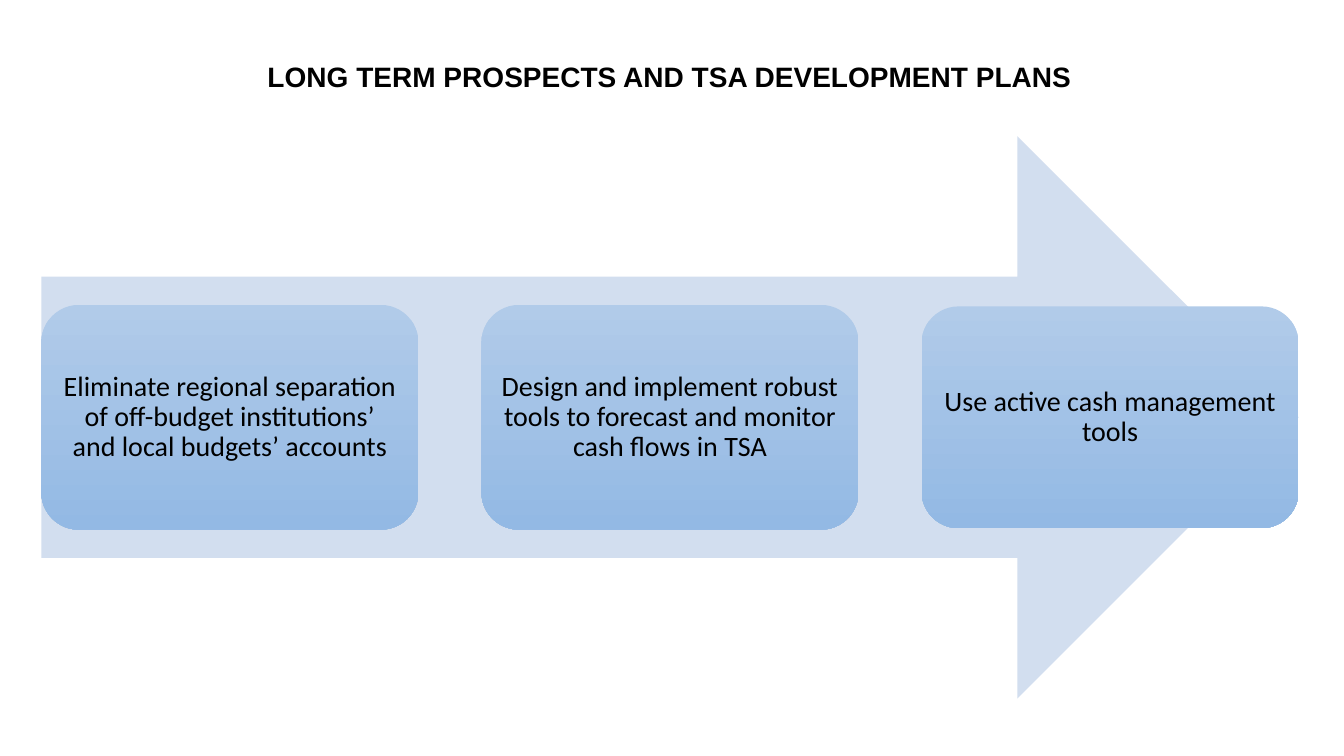
from pptx import Presentation
from pptx.dml.color import RGBColor
from pptx.enum.shapes import MSO_SHAPE
from pptx.enum.text import MSO_ANCHOR, PP_ALIGN
from pptx.util import Inches, Pt

TITLE = "LONG TERM PROSPECTS AND TSA DEVELOPMENT PLANS"
STEPS = [
    ("Eliminate regional separation of off-budget institutions’ and local budgets’ accounts", 2.23),
    ("Design and implement robust tools to forecast and monitor cash flows in TSA", 2.23),
    ("Use active cash management tools", 2.2),
]

BLACK = RGBColor(0x00, 0x00, 0x00)
ARROW_BLUE = RGBColor(0xD2, 0xDE, 0xEF)
CARD_TOP = RGBColor(0xB1, 0xCB, 0xE9)
CARD_BOTTOM = RGBColor(0x93, 0xB9, 0xE4)

ARROW_LEFT, ARROW_TOP, ARROW_W, ARROW_H = 0.41, 1.35, 12.47, 5.58
CARD_W = 3.74
CARD_STEP = (ARROW_W - CARD_W) / (len(STEPS) - 1)
CARD_MIDDLE = ARROW_TOP + ARROW_H / 2
CARD_INSET = Inches(0.08)


def add_plain_shape(slide, kind, left, top, width, height):
    sp = slide.shapes.add_shape(kind, Inches(left), Inches(top), Inches(width), Inches(height))
    sp.shadow.inherit = False
    sp.line.fill.background()
    return sp


def set_text(sp, text, font, bold=False):
    tf = sp.text_frame
    tf.word_wrap = True
    p = tf.paragraphs[0]
    p.text = text
    p.alignment = PP_ALIGN.CENTER
    r = p.runs[0]
    r.font.name = font
    r.font.size = Pt(20)
    r.font.bold = bold
    r.font.color.rgb = BLACK
    return tf


def add_card(slide, index, text, height):
    sp = add_plain_shape(slide, MSO_SHAPE.ROUNDED_RECTANGLE, ARROW_LEFT + index * CARD_STEP,
                         CARD_MIDDLE - height / 2, CARD_W, height)
    sp.fill.gradient()
    sp.fill.gradient_angle = 270
    for stop, color, position in zip(sp.fill.gradient_stops, (CARD_TOP, CARD_BOTTOM), (0, 1)):
        stop.color.rgb = color
        stop.position = position
    tf = set_text(sp, text, "Calibri")
    tf.vertical_anchor = MSO_ANCHOR.MIDDLE
    tf.margin_left = tf.margin_right = tf.margin_top = tf.margin_bottom = CARD_INSET
    tf.paragraphs[0].line_spacing = 0.9


prs = Presentation()
prs.slide_width, prs.slide_height = Inches(13.33), Inches(7.5)
slide = prs.slides.add_slide(prs.slide_layouts[6])

title = slide.shapes.add_textbox(Inches(0.6), Inches(0.54), Inches(12.08), Inches(0.57))
set_text(title, TITLE, "Arial", bold=True)

arrow = add_plain_shape(slide, MSO_SHAPE.RIGHT_ARROW, ARROW_LEFT, ARROW_TOP, ARROW_W, ARROW_H)
arrow.fill.solid()
arrow.fill.fore_color.rgb = ARROW_BLUE

for index, (text, height) in enumerate(STEPS):
    add_card(slide, index, text, height)

prs.save("out.pptx")
